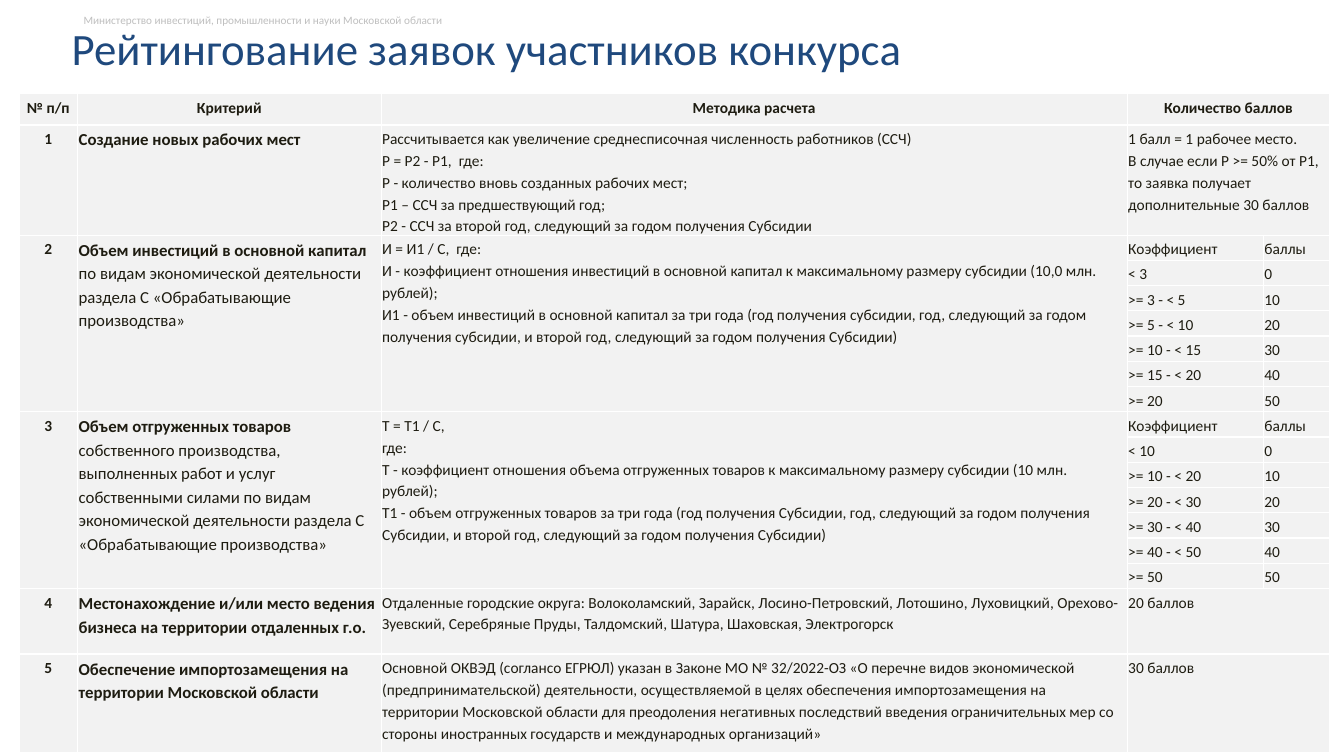
from dataclasses import dataclass
from itertools import pairwise

from lxml.etree import SubElement
from pptx import Presentation
from pptx.dml.color import RGBColor
from pptx.enum.text import MSO_ANCHOR as Anchor, MSO_AUTO_SIZE as AutoSize, PP_ALIGN as Align
from pptx.oxml.ns import qn
from pptx.table import Table, _Cell as Cell
from pptx.text.text import TextFrame, _Paragraph as Paragraph
from pptx.util import Emu, Pt

EMU_PER_PX = 9144
FONT = "Calibri"
NAVY = RGBColor(0x1F, 0x49, 0x7D)
SILVER = RGBColor(0xBF, 0xBF, 0xBF)
INK = RGBColor(0x1E, 0x1C, 0x11)
PALE = RGBColor(0xF2, 0xF2, 0xF2)
WHITE = RGBColor(0xFF, 0xFF, 0xFF)

COLUMN_WIDTHS = (58, 301, 740, 135, 66)
HEADINGS = ("№ п/п", "Критерий", "Методика расчета", "Количество баллов")
HEADING_HEIGHT = 31
BAND_HEIGHT = 23
POINTS_STEP = 10


@dataclass(frozen=True)
class Criterion:
    name: str
    method: tuple[str, ...]
    detail: str = ""
    score: tuple[str, ...] = ()
    thresholds: tuple[int, ...] = ()
    height: int = BAND_HEIGHT

    def bands(self) -> list[tuple[str, str]]:
        if not self.thresholds:
            return []
        labels = [f"< {self.thresholds[0]}"]
        labels += [f">= {low} - < {high}" for low, high in pairwise(self.thresholds)]
        labels.append(f">= {self.thresholds[-1]}")
        scored = [(label, str(i * POINTS_STEP)) for i, label in enumerate(labels)]
        return [("Коэффициент", "баллы")] + scored

    def row_count(self) -> int:
        return max(1, len(self.bands()))


CRITERIA = (
    Criterion(
        "Создание новых рабочих мест",
        (
            "Рассчитывается как увеличение среднесписочная численность работников (ССЧ)",
            "Р = Р2 - Р1,  где:",
            "Р - количество вновь созданных рабочих мест;",
            "Р1 – ССЧ за предшествующий год;",
            "Р2 - ССЧ за второй год, следующий за годом получения Субсидии",
        ),
        score=(
            "1 балл = 1 рабочее место.",
            "В случае если Р >= 50% от Р1, то заявка получает дополнительные 30 баллов",
        ),
        height=106,
    ),
    Criterion(
        "Объем инвестиций в основной капитал ",
        (
            "И = И1 / С,  где:",
            "И - коэффициент отношения инвестиций в основной капитал к максимальному размеру "
            "субсидии (10,0 млн. рублей);",
            "И1 - объем инвестиций в основной капитал за три года (год получения субсидии, год, "
            "следующий за годом получения субсидии, и второй год, следующий за годом получения "
            "Субсидии)",
        ),
        detail="по видам экономической деятельности раздела C «Обрабатывающие производства»",
        thresholds=(3, 5, 10, 15, 20),
    ),
    Criterion(
        "Объем отгруженных товаров ",
        (
            "Т = Т1 / С,",
            "где:",
            "Т - коэффициент отношения объема отгруженных товаров к максимальному размеру "
            "субсидии (10 млн. рублей);",
            "Т1 - объем отгруженных товаров за три года (год получения Субсидии, год, "
            "следующий за годом получения Субсидии, и второй год, следующий за годом получения "
            "Субсидии)",
        ),
        detail="собственного производства, выполненных работ и услуг собственными силами по видам "
        "экономической деятельности раздела C «Обрабатывающие производства»",
        thresholds=(10, 20, 30, 40, 50),
    ),
    Criterion(
        "Местонахождение и/или место ведения бизнеса на территории отдаленных г.о.",
        (
            "Отдаленные городские округа: Волоколамский, Зарайск, Лосино-Петровский, Лотошино, "
            "Луховицкий, Орехово-Зуевский, Серебряные Пруды, Талдомский, Шатура, Шаховская, "
            "Электрогорск",
        ),
        score=("20 баллов",),
        height=65,
    ),
    Criterion(
        "Обеспечение импортозамещения на территории Московской области",
        (
            "Основной ОКВЭД (соглансо ЕГРЮЛ) указан в Законе МО № 32/2022-ОЗ «О перечне видов "
            "экономической (предпринимательской) деятельности, осуществляемой в целях обеспечения "
            "импортозамещения на территории Московской области для преодоления негативных "
            "последствий введения ограничительных мер со стороны иностранных государств и "
            "международных организаций»",
        ),
        score=("30 баллов",),
        height=98,
    ),
)


def px(length: int) -> Emu:
    return Emu(length * EMU_PER_PX)


def style(para: Paragraph, size: int, color: RGBColor) -> None:
    para.font.name = FONT
    para.font.size = Pt(size)
    para.font.color.rgb = color


def write_line(frame: TextFrame, text: str, size: int, color: RGBColor) -> None:
    frame.text = text
    frame.word_wrap = True
    frame.auto_size = AutoSize.SHAPE_TO_FIT_TEXT
    para = frame.paragraphs[0]
    para.alignment = Align.LEFT
    style(para, size, color)


def format_cell(cell: Cell) -> None:
    cell.margin_left = cell.margin_right = px(1)
    cell.margin_top = cell.margin_bottom = px(2)
    properties = cell._tc.get_or_add_tcPr()
    for side in ("a:lnL", "a:lnR", "a:lnT", "a:lnB"):
        border = SubElement(properties, qn(side), w=str(Pt(1)))
        SubElement(SubElement(border, qn("a:solidFill")), qn("a:srgbClr"), val=str(WHITE))
    cell.fill.solid()
    cell.fill.fore_color.rgb = PALE
    style(cell.text_frame.paragraphs[0], 11, INK)


def fill_cell(cell: Cell, lines: tuple[str, ...], bold: bool = False, detail: str = "",
              size: int = 11, align: Align = Align.LEFT) -> None:
    cell.text = "\n".join(lines)
    for para in cell.text_frame.paragraphs:
        style(para, size, INK)
        para.alignment = align
        para.line_spacing = 1.15
        if detail:
            para.runs[0].font.bold = bold
            span = para.add_run()
            span.text = detail
            span.font.bold = False
        else:
            para.font.bold = bold


def fill_criterion(table: Table, top: int, number: int, criterion: Criterion) -> None:
    bands = criterion.bands()
    bottom = top + criterion.row_count() - 1
    for row in range(top, bottom + 1):
        table.rows[row].height = px(criterion.height)
    if bands:
        for column in range(3):
            table.cell(top, column).merge(table.cell(bottom, column))
        for row, band in enumerate(bands, top):
            for column, text in enumerate(band, 3):
                fill_cell(table.cell(row, column), (text,))
    else:
        table.cell(top, 3).merge(table.cell(top, 4))
        fill_cell(table.cell(top, 3), criterion.score)
    fill_cell(table.cell(top, 0), (str(number),), bold=True, align=Align.CENTER)
    fill_cell(table.cell(top, 1), (criterion.name,), bold=True, detail=criterion.detail, size=12)
    fill_cell(table.cell(top, 2), criterion.method)


def main() -> None:
    deck = Presentation()
    deck.slide_width, deck.slide_height = px(1333), px(750)
    page = deck.slides.add_slide(deck.slide_layouts[5])

    ministry = page.shapes.add_textbox(px(73), px(8), px(565), px(24))
    write_line(ministry.text_frame, "Министерство инвестиций, промышленности и науки Московской области",
               8, SILVER)

    title = page.shapes.title
    title.left, title.top, title.width, title.height = px(61), px(15), px(1177), px(64)
    write_line(title.text_frame, "Рейтингование заявок участников конкурса", 32, NAVY)
    title.text_frame.vertical_anchor = Anchor.MIDDLE

    row_total = 1 + sum(criterion.row_count() for criterion in CRITERIA)
    table = page.shapes.add_table(row_total, len(COLUMN_WIDTHS), px(19), px(93),
                                  px(sum(COLUMN_WIDTHS)), px(656)).table
    table.first_row = table.horz_banding = False
    for column, width in zip(table.columns, COLUMN_WIDTHS):
        column.width = px(width)
    for cell in table.iter_cells():
        format_cell(cell)

    table.rows[0].height = px(HEADING_HEIGHT)
    table.cell(0, 3).merge(table.cell(0, 4))
    for column, heading in enumerate(HEADINGS):
        fill_cell(table.cell(0, column), (heading,), bold=True, align=Align.CENTER)
    top = 1
    for number, criterion in enumerate(CRITERIA, 1):
        fill_criterion(table, top, number, criterion)
        top += criterion.row_count()

    deck.save("out.pptx")


if __name__ == "__main__":
    main()
